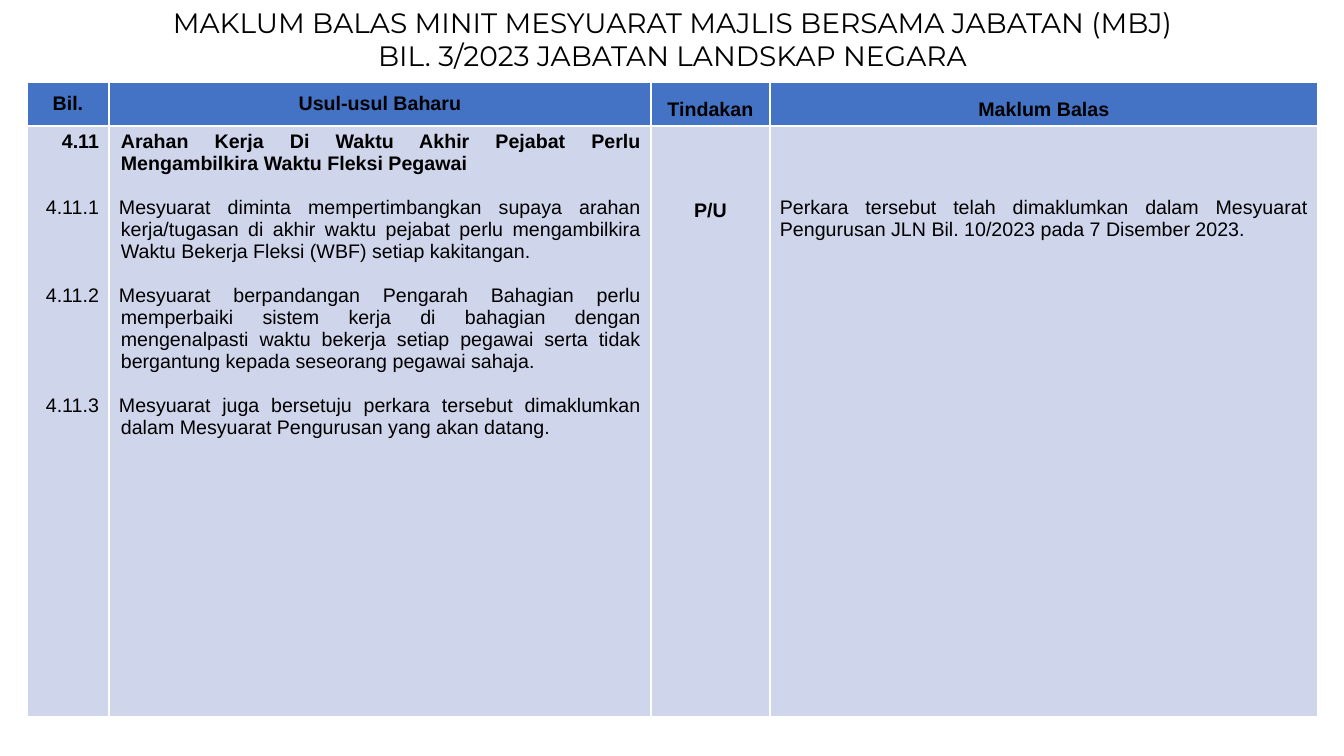
"""Build the meeting feedback slide: a title above a four-column table."""
from dataclasses import dataclass

from lxml import etree
from pptx import Presentation
from pptx.dml.color import RGBColor
from pptx.enum.text import MSO_ANCHOR, MSO_AUTO_SIZE, PP_ALIGN
from pptx.oxml.ns import qn
from pptx.util import Pt

LEFT, MID, RIGHT, FULL = PP_ALIGN.LEFT, PP_ALIGN.CENTER, PP_ALIGN.RIGHT, PP_ALIGN.JUSTIFY
TOP, CENTRE = MSO_ANCHOR.TOP, MSO_ANCHOR.MIDDLE
FIXED = MSO_AUTO_SIZE.NONE

TITLE = [
    "MAKLUM BALAS MINIT MESYUARAT MAJLIS BERSAMA JABATAN (MBJ)",
    "BIL. 3/2023 JABATAN LANDSKAP NEGARA",
]
HEADS = [("Bil.", 1), ("Usul-usul Baharu", 1), ("Tindakan", 1.5), ("Maklum Balas", 1.5)]
NUMBERS = ["4.11", "4.11.1", "4.11.2", "4.11.3"]
MOTIONS = [
    "Arahan Kerja Di Waktu Akhir Pejabat Perlu Mengambilkira Waktu Fleksi Pegawai",
    "Mesyuarat diminta mempertimbangkan supaya arahan kerja/tugasan di akhir waktu "
    "pejabat perlu mengambilkira Waktu Bekerja Fleksi (WBF) setiap kakitangan.",
    "Mesyuarat berpandangan Pengarah Bahagian perlu memperbaiki sistem kerja di bahagian "
    "dengan mengenalpasti waktu bekerja setiap pegawai serta tidak bergantung kepada "
    "seseorang pegawai sahaja.",
    "Mesyuarat juga bersetuju perkara tersebut dimaklumkan dalam Mesyuarat Pengurusan "
    "yang akan datang.",
]
ACTION = ["P/U"]
REPLY = [
    "Perkara tersebut telah dimaklumkan dalam Mesyuarat Pengurusan JLN Bil. 10/2023 "
    "pada 7 Disember 2023."
]
# text, alignment, blank lines before each paragraph, bold flags, top inset, hanging indent
BODY = [
    (NUMBERS, RIGHT, [0, 2, 3, 4], [True, False, False, False], 5, 0),
    (MOTIONS, FULL, [0, 1, 1, 1], [True, False, False, False], 5, 2),
    (ACTION, MID, [0], [True], 74, 0),
    (REPLY, FULL, [0], [False], 71, 0),
]

PAGE = (1344, 756)
TITLE_BOX = (69, 0, 1207, 78)
ORIGIN = (27, 82)
COLS = [82, 542, 119, 548]
ROWS = [44, 591]
LINE = 15.7


@dataclass(frozen=True)
class Theme:
    """Colours, fonts and type sizes."""
    ink: str = "000000"
    head: str = "4472C4"
    body: str = "CFD5EA"
    rule: str = "FFFFFF"
    title_font: str = "Montserrat"
    font: str = "Arial"
    title_size: int = 20
    size: int = 14


THEME = Theme()


def px(n):
    """Turn px into EMU."""
    return round(n * 914400 / 100.8)


def style(para, font, size, bold, align):
    """Format one paragraph and its runs."""
    para.alignment = align
    for run in para.runs:
        run.font.name = font
        run.font.size = Pt(size)
        run.font.bold = bold
        run.font.color.rgb = RGBColor.from_string(THEME.ink)


def dress(cell, fill, top, anchor):
    """Give a cell its borders, fill, insets and anchor."""
    props = cell._tc.get_or_add_tcPr()
    for side in "LRTB":
        line = etree.SubElement(props, qn(f"a:ln{side}"), w=str(Pt(1)))
        solid = etree.SubElement(line, qn("a:solidFill"))
        etree.SubElement(solid, qn("a:srgbClr"), val=THEME.rule)
    cell.fill.solid()
    cell.fill.fore_color.rgb = RGBColor.from_string(fill)
    cell.margin_left = cell.margin_right = px(10)
    cell.margin_top, cell.margin_bottom = px(top), px(5)
    cell.vertical_anchor = anchor


def add_title(slide):
    """Place and format the title."""
    shape = slide.shapes.title
    shape.left, shape.top, shape.width, shape.height = map(px, TITLE_BOX)
    frame = shape.text_frame
    frame.text = "\n".join(TITLE)
    frame.word_wrap = True
    frame.auto_size = FIXED
    frame.vertical_anchor = TOP
    for para in frame.paragraphs:
        para.line_spacing = 1.0
        style(para, THEME.title_font, THEME.title_size, False, MID)


def add_grid(slide):
    """Add the table and fill its two rows."""
    box = map(px, (*ORIGIN, sum(COLS), sum(ROWS)))
    table = slide.shapes.add_table(len(ROWS), len(COLS), *box).table
    for col, width in zip(table.columns, COLS):
        col.width = px(width)
    for row, height in zip(table.rows, ROWS):
        row.height = px(height)

    for i, (text, space) in enumerate(HEADS):
        cell = table.cell(0, i)
        dress(cell, THEME.head, 5, CENTRE)
        cell.text_frame.text = text
        para = cell.text_frame.paragraphs[0]
        para.line_spacing = float(space)
        style(para, THEME.font, THEME.size, True, MID)

    for i, (texts, align, gaps, bolds, top, hang) in enumerate(BODY):
        cell = table.cell(1, i)
        dress(cell, THEME.body, top, TOP)
        cell.text_frame.text = "\n".join(texts)
        for para, gap, bold in zip(cell.text_frame.paragraphs, gaps, bolds):
            style(para, THEME.font, THEME.size, bold, align)
            para.space_before = Pt(gap * LINE)
            if hang:
                props = para._p.get_or_add_pPr()
                props.set("marL", str(px(hang)))
                props.set("indent", str(0 if bold else -px(hang)))


def main():
    """Build and save the slide."""
    deck = Presentation()
    deck.slide_width, deck.slide_height = map(px, PAGE)
    slide = deck.slides.add_slide(deck.slide_layouts.get_by_name("Title Only"))
    add_title(slide)
    add_grid(slide)
    deck.save("out.pptx")


if __name__ == "__main__":
    main()
